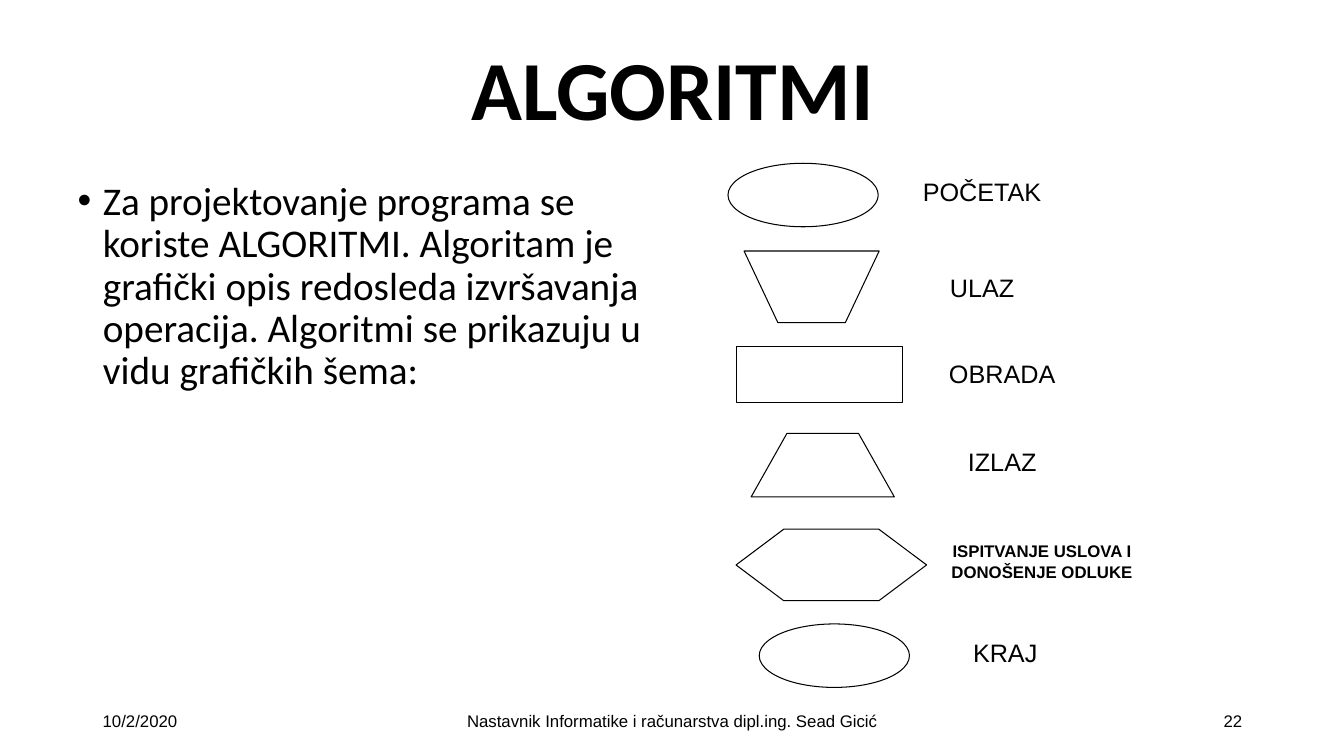
from dataclasses import dataclass

import pptx
import pptx.dml.color
import pptx.enum.shapes
import pptx.enum.text
import pptx.oxml
import pptx.oxml.ns
import pptx.util

Inches = pptx.util.Inches
Pt = pptx.util.Pt
Align = pptx.enum.text.PP_ALIGN
Anchor = pptx.enum.text.MSO_ANCHOR
Preset = pptx.enum.shapes.MSO_SHAPE


@dataclass(frozen=True)
class Theme:
    ink: pptx.dml.color.RGBColor = pptx.dml.color.RGBColor(0, 0, 0)
    paper: pptx.dml.color.RGBColor = pptx.dml.color.RGBColor(255, 255, 255)
    heading_font: str = "Calibri"
    label_font: str = "Arial"
    title: int = 60
    body: int = 28
    label: int = 18
    small: int = 12
    outline: float = 0.75


THEME = Theme()


def place(shape, box):
    shape.left, shape.top, shape.width, shape.height = (Inches(v) for v in box)


def write(shape, text, *, size, font=THEME.label_font, bold=False,
          align=Align.LEFT, anchor=Anchor.TOP, line_spacing=None, before=0):
    frame = shape.text_frame
    frame.word_wrap = True
    frame.auto_size = pptx.enum.text.MSO_AUTO_SIZE.NONE
    frame.vertical_anchor = anchor
    paragraph = frame.paragraphs[0]
    paragraph.alignment = align
    paragraph.line_spacing = line_spacing
    paragraph.space_before = Pt(before)
    run = paragraph.add_run()
    run.text = text
    run.font.name = font
    run.font.size = Pt(size)
    run.font.bold = bold
    run.font.color.rgb = THEME.ink
    return paragraph


def add_label(slide, box, text, **text_format):
    label = slide.shapes.add_textbox(*(Inches(v) for v in box))
    write(label, text, **text_format)


def outline(symbol):
    symbol.shadow.inherit = False
    symbol.fill.solid()
    symbol.fill.fore_color.rgb = THEME.paper
    symbol.line.color.rgb = THEME.ink
    symbol.line.width = Pt(THEME.outline)


def add_preset(slide, box, preset):
    symbol = slide.shapes.add_shape(preset, *(Inches(v) for v in box))
    outline(symbol)
    return symbol


def add_trapezoid(slide, box, narrow_top):
    """Trapezoid whose short side is half as long as its long side."""
    left, top, width, height = box
    short_y, long_y = (top, top + height) if narrow_top else (top + height, top)
    corners = [(left, long_y), (left + width / 4, short_y),
               (left + width * 3 / 4, short_y), (left + width, long_y)]
    points = [(Inches(x), Inches(y)) for x, y in corners]
    builder = slide.shapes.build_freeform(*points[0])
    builder.add_line_segments(points[1:], close=True)
    outline(builder.convert_to_shape())


def add_ellipse(slide, box):
    add_preset(slide, box, Preset.OVAL)


def add_rectangle(slide, box):
    add_preset(slide, box, Preset.RECTANGLE)


def add_hexagon(slide, box):
    add_preset(slide, box, Preset.HEXAGON).adjustments[0] = 0.667


def add_input(slide, box):
    add_trapezoid(slide, box, narrow_top=False)


def add_output(slide, box):
    add_trapezoid(slide, box, narrow_top=True)


def add_title(slide, box):
    title = slide.shapes.title
    place(title, box)
    write(title, "ALGORITMI", size=THEME.title, font=THEME.heading_font,
          bold=True, align=Align.CENTER, anchor=Anchor.MIDDLE, line_spacing=0.9)


def add_description(slide, box):
    description = slide.placeholders[1]
    place(description, box)
    paragraph = write(
        description,
        "Za projektovanje programa se koriste ALGORITMI. Algoritam je grafički "
        "opis redosleda izvršavanja operacija. Algoritmi se prikazuju u vidu "
        "grafičkih šema:",
        size=THEME.body, font=THEME.heading_font, line_spacing=0.9, before=10)
    properties = paragraph.runs[0]._r.getparent().get_or_add_pPr()
    properties.set("marL", str(Inches(0.25)))
    properties.set("indent", str(-Inches(0.25)))
    namespace = pptx.oxml.ns.nsdecls("a")
    for bullet in ('buFont {} typeface="Arial"', 'buChar {} char="•"'):
        properties.append(pptx.oxml.parse_xml(f"<a:{bullet.format(namespace)}/>"))


def add_legend(slide, box):
    """Flowchart symbols, each with its meaning; offsets are from the box corner."""
    left, top = box[:2]
    normal = dict(size=THEME.label)
    strong = dict(size=THEME.small, bold=True)
    rows = [
        (add_ellipse, (0, 0, 1.49, 0.63), "POČETAK", (1.81, 0.08, 1.42, 0.4), normal),
        (add_input, (0.16, 0.87, 1.34, 0.71), "ULAZ", (1.73, 1.03, 1.58, 0.4), normal),
        (add_rectangle, (0.08, 1.82, 1.65, 0.55), "OBRADA", (2.05, 1.89, 1.34, 0.4), normal),
        (add_output, (0.23, 2.68, 1.42, 0.63), "IZLAZ", (1.97, 2.76, 1.5, 0.4), normal),
        (add_hexagon, (0.08, 3.63, 1.89, 0.71), "ISPITVANJE USLOVA I DONOŠENJE ODLUKE",
         (2.05, 3.7, 2.13, 0.5), strong),
        (add_ellipse, (0.31, 4.57, 1.49, 0.63), "KRAJ", (2.2, 4.65, 1.1, 0.4), normal),
    ]
    for draw, symbol, meaning, label, text_format in rows:
        draw(slide, (left + symbol[0], top + symbol[1], *symbol[2:]))
        add_label(slide, (left + label[0], top + label[1], *label[2:]), meaning,
                  align=Align.CENTER, **text_format)


def add_footer(slide, box):
    left, top, width, height = box
    side, middle = 3, 4.5
    parts = [
        ("10/2/2020", left, side, Align.LEFT),
        ("Nastavnik Informatike i računarstva dipl.ing. Sead Gicić",
         left + (width - middle) / 2, middle, Align.CENTER),
        ("22", left + width - side, side, Align.RIGHT),
    ]
    for text, x, part_width, align in parts:
        add_label(slide, (x, top, part_width, height), text,
                  size=THEME.small, align=align, anchor=Anchor.MIDDLE)


def main():
    deck = pptx.Presentation()
    deck.slide_width, deck.slide_height = Inches(13.33), Inches(7.5)
    slide = deck.slides.add_slide(deck.slide_layouts[1])
    slide.background.fill.solid()
    slide.background.fill.fore_color.rgb = THEME.paper
    add_footer(slide, (0.92, 6.95, 11.5, 0.4))
    add_title(slide, (0.67, 0.3, 12, 1.25))
    add_description(slide, (0.67, 1.75, 5.89, 4.95))
    add_legend(slide, (7.22, 1.62, 4.18, 5.2))
    deck.save("out.pptx")


if __name__ == "__main__":
    main()
